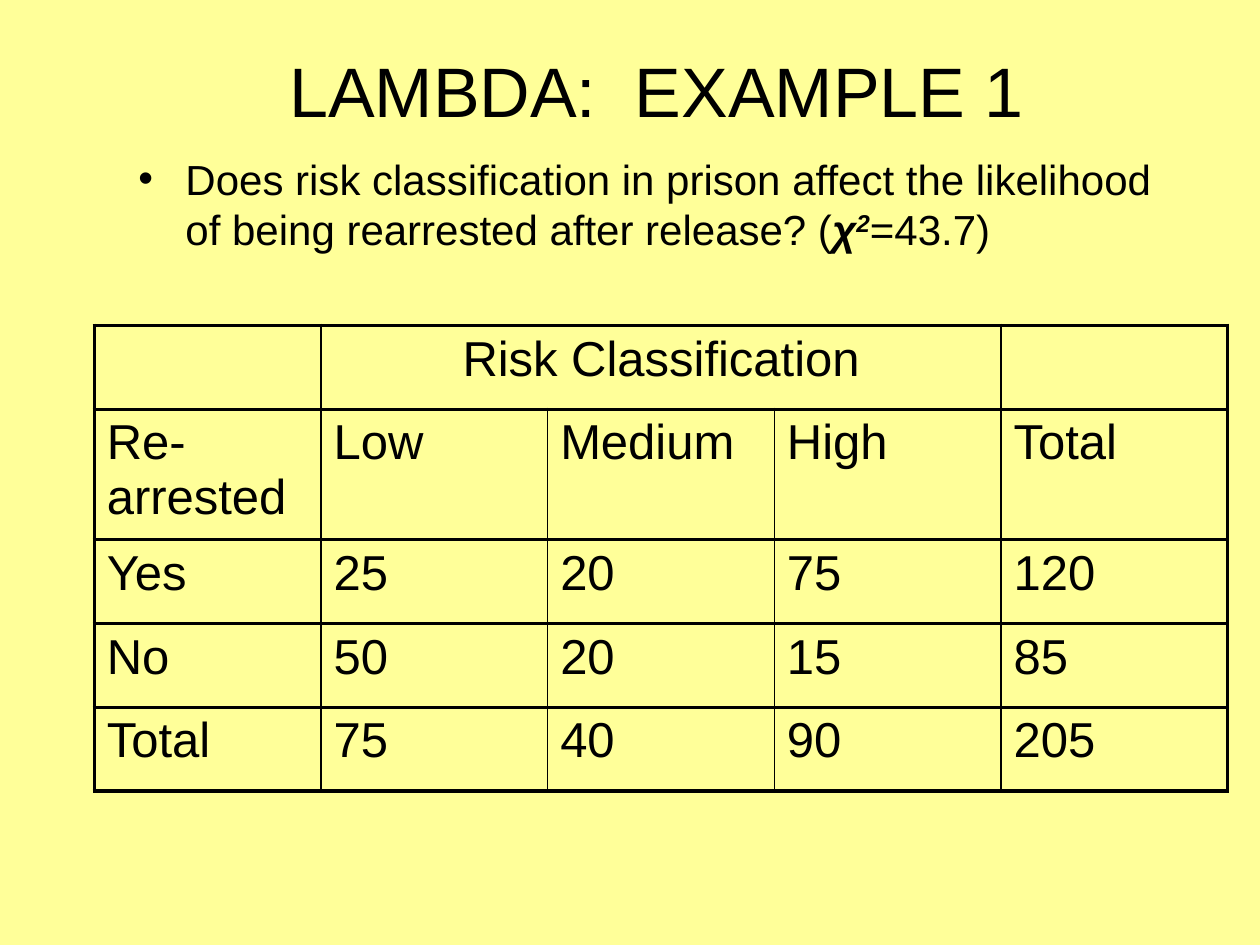
from dataclasses import dataclass

import lxml.etree
import pptx
import pptx.dml.color
import pptx.enum.text
import pptx.oxml.ns
import pptx.util

Cm = pptx.util.Cm
Pt = pptx.util.Pt
ALIGN = pptx.enum.text.PP_ALIGN
ANCHOR = pptx.enum.text.MSO_ANCHOR

COLORS = {"background": "FFFF99", "ink": "000000"}
FONT = "Arial"
THICK, THIN = 2.25, 1

COLUMN_WIDTH = Cm(4.57)
ROW_HEIGHT = Cm(1.69)
HEADING_HEIGHT = Cm(2.62)
ROWS = [
    ["", "Risk Classification", "", "", ""],
    ["Re-arrested", "Low", "Medium", "High", "Total"],
    ["Yes", "25", "20", "75", "120"],
    ["No", "50", "20", "15", "85"],
    ["Total", "75", "40", "90", "205"],
]


@dataclass
class Span:
    text: str
    emphasis: bool = False
    raised: bool = False


QUESTION = [
    Span("Does risk classification in prison affect the likelihood "
         "of being rearrested after release? ("),
    Span("χ", emphasis=True),
    Span("2", emphasis=True, raised=True),
    Span("=43.7)"),
]


def rgb(name: str) -> pptx.dml.color.RGBColor:
    return pptx.dml.color.RGBColor.from_string(COLORS[name])


def add_element(parent, tag: str, **attributes: str):
    element = lxml.etree.SubElement(parent, pptx.oxml.ns.qn(tag))
    for name, value in attributes.items():
        element.set(name, value)
    return element


def add_span(para, span: Span, size: float) -> None:
    run = para.add_run()
    run.text = span.text
    run.font.name = FONT
    run.font.size = Pt(size)
    run.font.bold = run.font.italic = span.emphasis
    run.font.color.rgb = rgb("ink")
    if span.raised:
        run.font._element.set("baseline", "30000")


def add_relative_space_before(para) -> None:
    """Put 20% of the text size before the paragraph."""
    space = add_element(para._p.get_or_add_pPr(), "a:spcBef")
    add_element(space, "a:spcPct", val="20000")


def add_text_box(page, left, top, width, height, anchor):
    frame = page.shapes.add_textbox(left, top, width, height).text_frame
    frame.word_wrap = True
    frame.vertical_anchor = anchor
    return frame.paragraphs[0]


def add_title(page) -> None:
    para = add_text_box(page, Cm(2.12), Cm(0.85), Cm(22.23), Cm(1.9), ANCHOR.MIDDLE)
    para.alignment = ALIGN.CENTER
    add_span(para, Span("LAMBDA:  EXAMPLE 1"), 40)


def add_question(page) -> None:
    para = add_text_box(page, Cm(2.54), Cm(2.96), Cm(21.59), Cm(2.75), ANCHOR.TOP)
    add_relative_space_before(para)
    indent = Cm(0.95)
    properties = para._p.get_or_add_pPr()
    properties.set("marL", str(indent))
    properties.set("indent", str(-indent))
    add_element(properties, "a:buFont", typeface=FONT)
    add_element(properties, "a:buChar", char="•")
    for span in QUESTION:
        add_span(para, span, 24)


def set_borders(cell, widths: dict[str, float]) -> None:
    properties = cell._tc.get_or_add_tcPr()
    for side, width in widths.items():
        line = add_element(properties, f"a:ln{side}", w=str(Pt(width)))
        fill = add_element(line, "a:solidFill")
        add_element(fill, "a:srgbClr", val=COLORS["ink"])


def add_risk_table(page) -> None:
    row_count, column_count = len(ROWS), len(ROWS[0])
    table = page.shapes.add_table(
        row_count, column_count, Cm(1.9), Cm(6.56), COLUMN_WIDTH * column_count,
        ROW_HEIGHT * (row_count - 1) + HEADING_HEIGHT,
    ).table
    table.first_row = table.horz_banding = False
    for column in table.columns:
        column.width = COLUMN_WIDTH
    for row in table.rows:
        row.height = ROW_HEIGHT
    table.rows[1].height = HEADING_HEIGHT
    table.cell(0, 1).merge(table.cell(0, 3))

    for row_index, texts in enumerate(ROWS):
        for column_index, text in enumerate(texts):
            cell = table.cell(row_index, column_index)
            set_borders(cell, {
                "L": THICK if column_index == 0 else THIN,
                "R": THICK if column_index == column_count - 1 else THIN,
                "T": THICK,
                "B": THICK,
            })
            cell.fill.background()
            if text:
                para = cell.text_frame.paragraphs[0]
                add_relative_space_before(para)
                para.alignment = ALIGN.CENTER if row_index == 0 else ALIGN.LEFT
                add_span(para, Span(text), 28)


def main() -> None:
    deck = pptx.Presentation()
    deck.slide_width, deck.slide_height = Cm(25.4), Cm(19.05)
    page = deck.slides.add_slide(deck.slide_layouts[6])
    page.background.fill.solid()
    page.background.fill.fore_color.rgb = rgb("background")
    add_title(page)
    add_question(page)
    add_risk_table(page)
    deck.save("out.pptx")


if __name__ == "__main__":
    main()
